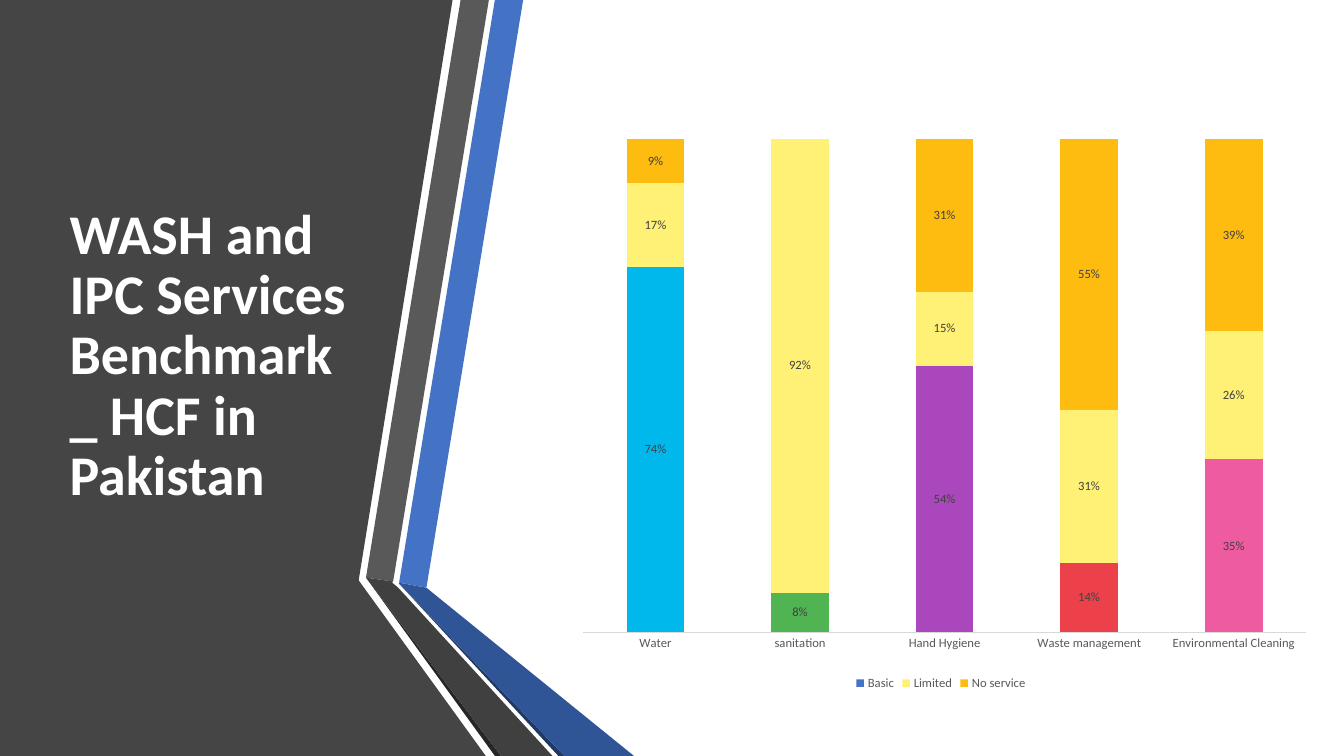
import pptx
import pptx.chart.data
import pptx.dml.color
import pptx.enum.chart
import pptx.enum.text
import pptx.oxml
import pptx.util
from pptx.oxml import ns

Pt = pptx.util.Pt

PANEL = ("454545", [(0, 0), (323.3, 0), (256.3, 414), (256.3, 414.7), (347, 540), (0, 540)])
BANDS = [
    ("4472C4", [(285.1, 416.2), (304.6, 419.8), (373.7, 0), (353.5, 0)]),
    ("595959", [(349.2, 0), (329, 0), (261.4, 412.6), (280.8, 415.4)]),
    ("262626", [(261.4, 412.6), (353.5, 540), (357.8, 540)]),
    ("203864", [(285.1, 416.9), (398.9, 540), (403.2, 540)]),
    ("2F5597", [(285.1, 416.9), (403.2, 540), (452.9, 540), (304.6, 419.8), (285.1, 416.2)]),
    ("404040", [(394.6, 540), (284.4, 419.8), (280.1, 416.2), (280.8, 415.4),
                (261.4, 412.6), (357.8, 540)]),
]
NEEDS = ["Water", "sanitation", "Hand Hygiene", "Waste management", "Environmental Cleaning"]
LEVELS = [
    ("Basic", "4472C4", [0.74, 0.08, 0.54, 0.14, 0.35]),
    ("Limited", "FFF176", [0.17, 0.92, 0.15, 0.31, 0.26]),
    ("No service", "FEBC11", [0.09, 0, 0.31, 0.55, 0.39]),
]
BASIC = ["00B8EC", "51B453", "AB47BC", "EC414A", "EF5BA1"]
FRAME = {"x": 0.025, "y": 0.022, "w": 0.96, "h": 0.885}


def put(item, values):
    """Set each attribute of item from a dict of values."""
    for name, value in values.items():
        setattr(item, name, value)


def hue(text):
    """Return the colour for a hex string."""
    return pptx.dml.color.RGBColor.from_string(text)


def paint(fill, color):
    """Make a fill solid in one colour."""
    fill.solid()
    fill.fore_color.rgb = hue(color)


def style(font, size, color, bold=False):
    """Format a font in Calibri."""
    put(font, {"name": "Calibri", "size": Pt(size), "bold": bold})
    font.color.rgb = hue(color)


def node(tag, inner):
    """Build a chart element from its tag and inner markup."""
    return pptx.oxml.parse_xml(f"<c:{tag} {ns.nsdecls('c')}>{inner}</c:{tag}>")


def draw(shapes, color, spots):
    """Draw a closed outline filled with one colour."""
    dots = [(Pt(x), Pt(y)) for x, y in spots]
    pen = shapes.build_freeform(*dots[0], scale=1.0)
    pen.add_line_segments(dots[1:], close=True)
    shape = pen.convert_to_shape()
    shape.shadow.inherit = False
    paint(shape.fill, color)
    shape.line.fill.background()


def head(slide, text):
    """Fill and place the title above the panel."""
    title = slide.shapes.title
    put(title, {"left": Pt(42.5), "top": Pt(54), "width": Pt(218.9), "height": Pt(401.8)})
    frame = title.text_frame
    put(frame, {"text": text, "word_wrap": True,
                "auto_size": pptx.enum.text.MSO_AUTO_SIZE.NONE,
                "vertical_anchor": pptx.enum.text.MSO_ANCHOR.MIDDLE})
    line = frame.paragraphs[0]
    put(line, {"alignment": pptx.enum.text.PP_ALIGN.LEFT, "line_spacing": 0.9})
    style(line.runs[0].font, 40, "FFFFFF", True)
    slide.shapes._spTree.append(title._element)


def label(series):
    """Show percent labels, leaving out those of empty parts."""
    marks = series.data_labels
    put(marks, {"show_value": True, "number_format": "0%", "number_format_is_linked": False})
    style(marks.font, 9, "404040")
    for spot, value in enumerate(series.values):
        if not value:
            marks._element.insert(0, node("dLbl", f'<c:idx val="{spot}"/><c:delete val="1"/>'))


def place(chart):
    """Fix the inner plot area within the chart."""
    area = chart._chartSpace.chart.plotArea
    for old in area.findall(ns.qn("c:layout")):
        area.remove(old)
    rules = '<c:layoutTarget val="inner"/><c:xMode val="edge"/><c:yMode val="edge"/>'
    rules += "".join(f'<c:{side} val="{share}"/>' for side, share in FRAME.items())
    area.insert(0, node("layout", f"<c:manualLayout>{rules}</c:manualLayout>"))


def axes(chart):
    """Format the category axis and hide the value axis."""
    none = pptx.enum.chart.XL_TICK_MARK.NONE
    base = chart.category_axis
    put(base, {"major_tick_mark": none, "minor_tick_mark": none, "has_major_gridlines": False})
    style(base.tick_labels.font, 9, "595959")
    base.format.line.width = Pt(0.75)
    base.format.line.color.rgb = hue("D9D9D9")
    scale = chart.value_axis
    put(scale, {"minimum_scale": 0, "maximum_scale": 1.2,
                "has_major_gridlines": False, "visible": False})
    put(scale.tick_labels, {"number_format": "0%", "number_format_is_linked": False})


def graph(slide):
    """Add the stacked column chart of service levels."""
    data = pptx.chart.data.CategoryChartData(number_format="0%")
    data.categories = NEEDS
    for name, _, values in LEVELS:
        data.add_series(name, values)
    kind = pptx.enum.chart.XL_CHART_TYPE.COLUMN_STACKED
    chart = slide.shapes.add_chart(kind, Pt(403.2), Pt(18), Pt(537.8), Pt(478.1), data).chart
    put(chart, {"has_title": False, "has_legend": True})
    style(chart.font, 10, "000000")
    put(chart.legend, {"position": pptx.enum.chart.XL_LEGEND_POSITION.BOTTOM,
                       "include_in_layout": False})
    style(chart.legend.font, 9, "595959")
    plot = chart.plots[0]
    put(plot, {"gap_width": 150, "overlap": 100, "vary_by_categories": False})
    for series, (_, color, _) in zip(plot.series, LEVELS):
        paint(series.format.fill, color)
        label(series)
    for spot, color in enumerate(BASIC):
        paint(plot.series[0].points[spot].format.fill, color)
    axes(chart)
    place(chart)


def main():
    """Build the slide and save it."""
    deck = pptx.Presentation()
    put(deck, {"slide_width": Pt(960), "slide_height": Pt(540)})
    slide = deck.slides.add_slide(deck.slide_layouts[5])
    draw(slide.shapes, *PANEL)
    group = slide.shapes.add_group_shape()
    for band in BANDS:
        draw(group.shapes, *band)
    head(slide, "WASH and IPC Services Benchmark _ HCF in Pakistan")
    graph(slide)
    deck.save("out.pptx")


if __name__ == "__main__":
    main()
